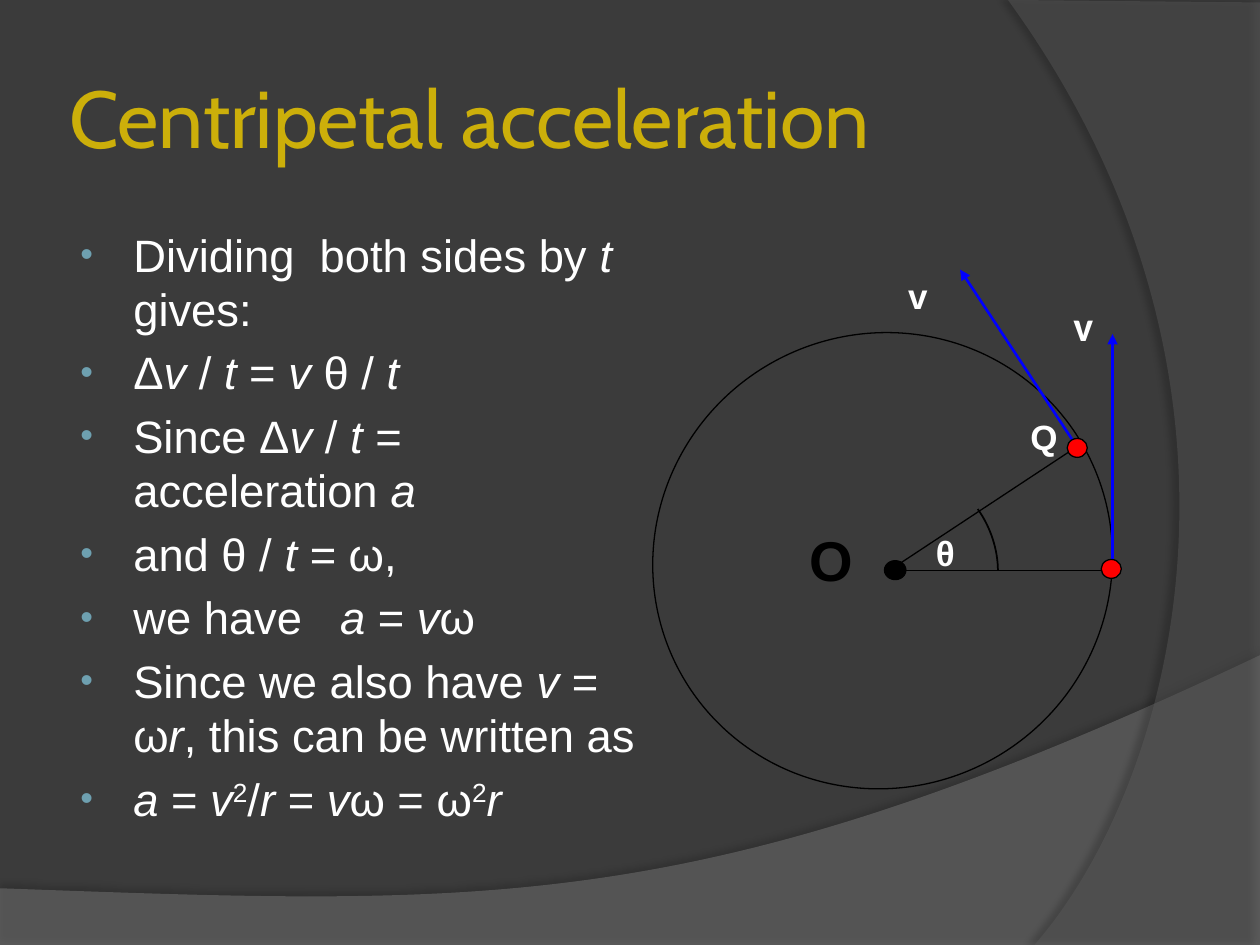
from copy import deepcopy
from lxml.etree import SubElement
from pptx import Presentation
from pptx.dml.color import RGBColor
from pptx.enum.shapes import MSO_CONNECTOR, MSO_SHAPE
from pptx.enum.text import MSO_ANCHOR
from pptx.oxml.ns import qn
from pptx.util import Inches, Pt

BACKGROUND = RGBColor(0x3B, 0x3B, 0x3B)
LOWER_WAVE = RGBColor(0x7F, 0x7F, 0x7F)
RIGHT_WAVE = RGBColor(0x5E, 0x5E, 0x5E)
GOLD = RGBColor(0xCC, 0xAF, 0x0A)
WHITE = RGBColor(0xFF, 0xFF, 0xFF)
BLACK = RGBColor(0, 0, 0)
RED = RGBColor(0xFF, 0, 0)
BLUE = RGBColor(0, 0, 0xFF)
TEAL = RGBColor(0x6E, 0xA0, 0xB0)

BODY = [
    "Dividing  both sides by _t_ gives:",
    "Δ_v_ / _t_ = _v _θ / _t_",
    "Since Δ_v_ / _t_ = acceleration _a_",
    "and θ / _t_ = ω,",
    "we have   _a_ = _v_ω",
    "Since we also have _v_ = ω_r_, this can be written as",
    "_a_ = _v_^2^/_r_ = _v_ω = ω^2^_r_",
]


def add_xml(parent, tag, **attrs):
    return SubElement(parent, qn(tag), {k: str(v) for k, v in attrs.items()})


def set_attrs(obj, values):
    for name, value in values.items():
        setattr(obj, name, value)


def add_run(p, text, color, **font):
    r = p.add_run()
    r.text = text
    r.font.color.rgb = color
    set_attrs(r.font, font)
    return r


def text_frame(s, x, y, w, h, **frame):
    tf = s.shapes.add_textbox(Inches(x), Inches(y), Inches(w), Inches(h)).text_frame
    set_attrs(tf, {"word_wrap": True, **frame})
    return tf


def add_curved(s, points, curve):
    emu = [(Inches(x), Inches(y)) for x, y in points]
    fb = s.shapes.build_freeform(*emu[0])
    fb.add_line_segments(emu[1:], close=True)
    sp = fb.convert_to_shape()
    sp.shadow.inherit = False
    outline = next(sp._element.iter(qn("a:path")))
    segments = list(outline)[curve:curve + 3]
    bezier = add_xml(outline, "a:cubicBezTo")
    outline.insert(curve, bezier)
    for segment in segments:
        bezier.append(segment[0])
        outline.remove(segment)
    anchors = emu[:curve] + emu[curve + 2:]
    sp.width = max(x for x, _ in anchors) - sp.left
    outline.set("w", str(sp.width))
    return sp, outline


def add_wave(s, points, curve, color, alpha, shadow_alpha, blur, dist, angle):
    sp, _ = add_curved(s, points, curve)
    sp.fill.solid()
    sp.fill.fore_color.rgb = color
    sp.line.fill.background()
    fill = sp._element.spPr.find(qn("a:solidFill"))
    add_xml(fill[0], "a:alpha", val=alpha * 1000)
    effects = sp._element.spPr.find(qn("a:effectLst"))
    shadow = add_xml(effects, "a:outerShdw", blurRad=Pt(blur), dist=Pt(dist),
                     dir=angle * 60000, algn="ctr", rotWithShape=0)
    tint = add_xml(shadow, "a:srgbClr", val=BLACK)
    add_xml(tint, "a:alpha", val=shadow_alpha * 1000)


def add_background(s, w, h):
    s.background.fill.solid()
    s.background.fill.fore_color.rgb = BACKGROUND
    lower = [(0, 7.05), (0, h + 0.01), (w, h + 0.01), (w, 5.2),
             (5.59, 7.29), (3.91, 7.19), (0, 7.05)]
    add_wave(s, lower, 4, LOWER_WAVE, 45, 35, 4, 3.5, 270)
    right = [(w, 0.02), (w, h), (8.21, h), (9.35, 6.19), (10.18, 3), (8, 0)]
    add_wave(s, right, 3, RIGHT_WAVE, 40, 45, 4, 4, 180)


def add_title(s, x, y, w, h):
    inset = Inches(0.05)
    tf = text_frame(s, x, y, w, h, vertical_anchor=MSO_ANCHOR.MIDDLE,
                    margin_left=inset, margin_right=inset)
    add_run(tf.paragraphs[0], "Centripetal acceleration", GOLD, name="Cabin", size=Pt(46))


def add_bullet(p):
    pPr = p._p.get_or_add_pPr()
    p.space_before = Pt(5.2)
    pPr.set("marL", str(Inches(0.46)))
    pPr.set("indent", str(Inches(-0.42)))
    add_xml(add_xml(pPr, "a:buClr"), "a:srgbClr", val=TEAL)
    add_xml(pPr, "a:buSzPct", val=80000)
    add_xml(pPr, "a:buFont", typeface="Arial")
    add_xml(pPr, "a:buChar", char="•")


def add_body(s, x, y, w, h):
    tf = text_frame(s, x, y, w, h)
    for n, line in enumerate(BODY):
        p = tf.add_paragraph() if n else tf.paragraphs[0]
        add_bullet(p)
        for i, part in enumerate(line.split("_")):
            for j, text in enumerate(part.split("^")):
                if text:
                    r = add_run(p, text, WHITE, name="Arial", size=Pt(25.9), italic=i % 2 == 1)
                    if j % 2:
                        r.font._element.set("baseline", "30000")


def add_ellipse(s, x, y, w, h, color=None, rotation=0):
    sp = s.shapes.add_shape(MSO_SHAPE.OVAL, Inches(x), Inches(y), Inches(w), Inches(h))
    sp.shadow.inherit = False
    sp.rotation = rotation
    if color is None:
        sp.fill.background()
    else:
        sp.fill.solid()
        sp.fill.fore_color.rgb = color
    sp.line.color.rgb = BLACK
    sp.line.width = Pt(0.75)


def add_line(s, x1, y1, x2, y2, color, width, arrow=False):
    c = s.shapes.add_connector(MSO_CONNECTOR.STRAIGHT, Inches(x1), Inches(y1),
                               Inches(x2), Inches(y2))
    c.line.color.rgb = color
    c.line.width = Pt(width)
    if arrow:
        add_xml(c._element.spPr.find(qn("a:ln")), "a:tailEnd", type="triangle")
    add_xml(c._element.spPr, "a:effectLst")


def add_label(s, x, y, w, h, text, size, color=WHITE, name="Arial", **frame):
    tf = text_frame(s, x, y, w, h, **frame)
    add_run(tf.paragraphs[0], text, color, name=name, size=Pt(size), bold=True)


def add_angle(s, x, y):
    points = [(0.72, 0), (0.82, 0.14), (0.88, 0.32), (0.88, 0.49), (0, 0.49)]
    sp, sector = add_curved(s, [(x + px, y + py) for px, py in points], 1)
    arc = deepcopy(sector)
    for segment in list(arc)[2:]:
        arc.remove(segment)
    arc.set("fill", "none")
    sector.set("stroke", "0")
    sector.addprevious(arc)
    sp.fill.background()
    sp.line.color.rgb = BLACK
    sp.line.width = Pt(1)


def add_diagram(s, x, y, w, h):
    add_ellipse(s, x + 1.85, y + 2.32, 0.17, 0.15, BLACK)
    add_ellipse(s, x, y + h - 3.6, w, 3.6, rotation=326.6)
    for x1, y1, x2, y2, color, width, arrow in [
        (1.93, 2.4, 3.66, 2.4, BLACK, 0.75, False),
        (1.9, 2.39, 3.4, 1.4, BLACK, 0.75, False),
        (3.38, 1.42, 2.45, 0.01, BLUE, 1.5, True),
        (3.66, 2.4, 3.66, 0.52, BLUE, 1.5, True),
    ]:
        add_line(s, x + x1, y + y1, x + x2, y + y2, color, width, arrow)
    add_label(s, x + 1.16, y + 2.04, 0.67, 0.55, "O", 32, BLACK, margin_top=0, margin_bottom=0)
    add_label(s, x + 2.91, y + 1.12, 0.58, 0.55, "Q", 20)
    add_label(s, x + 1.94, y, 0.67, 0.55, "v", 20)
    add_label(s, x + 3.25, y + 0.2, 0.74, 0.52, "v", 24, name="Calibri")
    add_label(s, x + 2.16, y + 2.04, 0.65, 0.58, "θ", 20)
    for dx, dy in [(3.57, 2.31), (3.3, 1.35)]:
        add_ellipse(s, x + dx, y + dy, 0.16, 0.15, RED)
    add_angle(s, x + 1.87, y + 1.91)


def main():
    prs = Presentation()
    set_attrs(prs, {"slide_width": Inches(10), "slide_height": Inches(7.5)})
    s = prs.slides.add_slide(prs.slide_layouts[6])
    add_background(s, 10, 7.5)
    add_title(s, 0.5, 0.3, 8.17, 1.25)
    add_body(s, 0.5, 1.75, 4.67, 4.95)
    add_diagram(s, 5.17, 2.13, 3.67, 4.12)
    prs.save("out.pptx")


if __name__ == "__main__":
    main()
